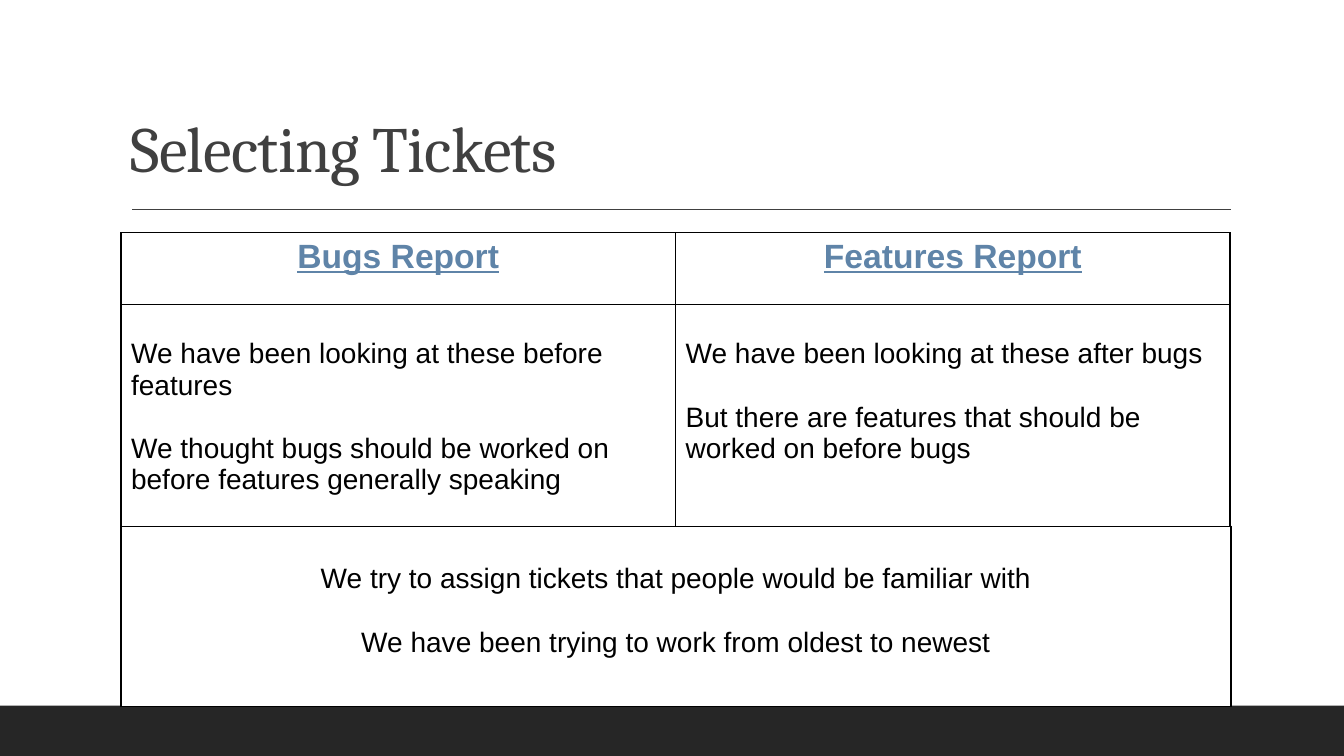
from dataclasses import dataclass

from lxml import etree
from pptx import Presentation
from pptx.dml.color import RGBColor
from pptx.enum.shapes import MSO_CONNECTOR, MSO_SHAPE
from pptx.enum.text import MSO_ANCHOR, PP_ALIGN
from pptx.oxml import parse_xml
from pptx.oxml.ns import nsdecls, qn
from pptx.util import Inches, Pt


@dataclass(frozen=True)
class Theme:
    white: str = "FFFFFF"
    black: str = "000000"
    bar: str = "262626"
    title: str = "404040"
    heading: str = "5F84A8"
    title_font: str = "Cambria"
    body_font: str = "Arial"
    title_size: int = 46
    heading_size: int = 24
    body_size: int = 20
    gap: int = 23


T = Theme()
LEFT = 1.2
HEADING = dict(name=T.body_font, size=Pt(T.heading_size), bold=True, underline=True)
BODY = dict(name=T.body_font, size=Pt(T.body_size), bold=False)


def set_font(font, color, **formats):
    for key, value in formats.items():
        setattr(font, key, value)
    font.color.rgb = RGBColor.from_string(color)


def add_bar(s):
    bar = s.shapes.add_shape(MSO_SHAPE.RECTANGLE, 0, Inches(7), Inches(13.33), Inches(0.5))
    bar.shadow.inherit = False
    bar.fill.solid()
    bar.fill.fore_color.rgb = RGBColor.from_string(T.bar)
    bar.line.fill.background()


def add_rule(s):
    rule = s.shapes.add_connector(
        MSO_CONNECTOR.STRAIGHT, Inches(1.31), Inches(2.08), Inches(12.21), Inches(2.08))
    rule.line.color.rgb = RGBColor.from_string(T.title)
    rule.line.width = Pt(1)
    etree.SubElement(rule._element.spPr, qn("a:effectLst"))


def add_title(s, text):
    tf = s.shapes.add_textbox(
        Inches(LEFT), Inches(0.31), Inches(11), Inches(1.59)).text_frame
    tf.word_wrap = True
    tf.vertical_anchor = MSO_ANCHOR.BOTTOM
    p = tf.paragraphs[0]
    p.line_spacing = 0.9
    r = p.add_run()
    r.text = text
    set_font(r.font, T.title, name=T.title_font, size=Pt(T.title_size))
    r.font._element.set("spc", "-50")


def add_grid(s, top, widths, heights):
    tbl = s.shapes.add_table(
        len(heights), len(widths), Inches(LEFT), Inches(top),
        Inches(sum(widths)), Inches(sum(heights))).table
    tbl.first_row = tbl.horz_banding = False
    for column, width in zip(tbl.columns, widths):
        column.width = Inches(width)
    for row, height in zip(tbl.rows, heights):
        row.height = Inches(height)
    return tbl


def fill_cell(cell, lines, color, formats, align=PP_ALIGN.LEFT, margin_top=0.05):
    # Borders come before the fill in the cell properties
    tc_pr = cell._tc.get_or_add_tcPr()
    for side in ("lnL", "lnR", "lnT", "lnB"):
        tc_pr.append(parse_xml(
            f'<a:{side} {nsdecls("a")} w="{Pt(1)}"><a:solidFill>'
            f'<a:srgbClr val="{T.black}"/></a:solidFill></a:{side}>'))
    cell.fill.solid()
    cell.fill.fore_color.rgb = RGBColor.from_string(T.white)
    cell.margin_top = Inches(margin_top)

    tf = cell.text_frame
    for i, line in enumerate(lines):
        p = tf.add_paragraph() if i else tf.paragraphs[0]
        p.alignment = align
        if i:
            p.space_before = Pt(T.gap)
        r = p.add_run()
        r.text = line
        set_font(r.font, color, **formats)


def main():
    prs = Presentation()
    prs.slide_width, prs.slide_height = Inches(13.33), Inches(7.5)
    s = prs.slides.add_slide(prs.slide_layouts[6])

    # Frame of the slide
    add_bar(s)
    add_rule(s)
    add_title(s, "Selecting Tickets")

    # Two reports side by side
    reports = {
        "Bugs Report": [
            "We have been looking at these before features",
            "We thought bugs should be worked on before features generally speaking",
        ],
        "Features Report": [
            "We have been looking at these after bugs",
            "But there are features that should be worked on before bugs",
        ],
    }
    tbl = add_grid(s, 2.31, [5.5, 5.5], [0.71, 2.2])
    for col, (heading, lines) in enumerate(reports.items()):
        fill_cell(tbl.cell(0, col), [heading], T.heading, HEADING, PP_ALIGN.CENTER)
        fill_cell(tbl.cell(1, col), lines, T.black, BODY, margin_top=0.34)

    # Shared rules below
    shared = [
        "We try to assign tickets that people would be familiar with",
        "We have been trying to work from oldest to newest",
    ]
    tbl = add_grid(s, 5.22, [11.01], [1.79])
    fill_cell(tbl.cell(0, 0), shared, T.black, BODY, PP_ALIGN.CENTER, 0.37)

    prs.save("out.pptx")


if __name__ == "__main__":
    main()
